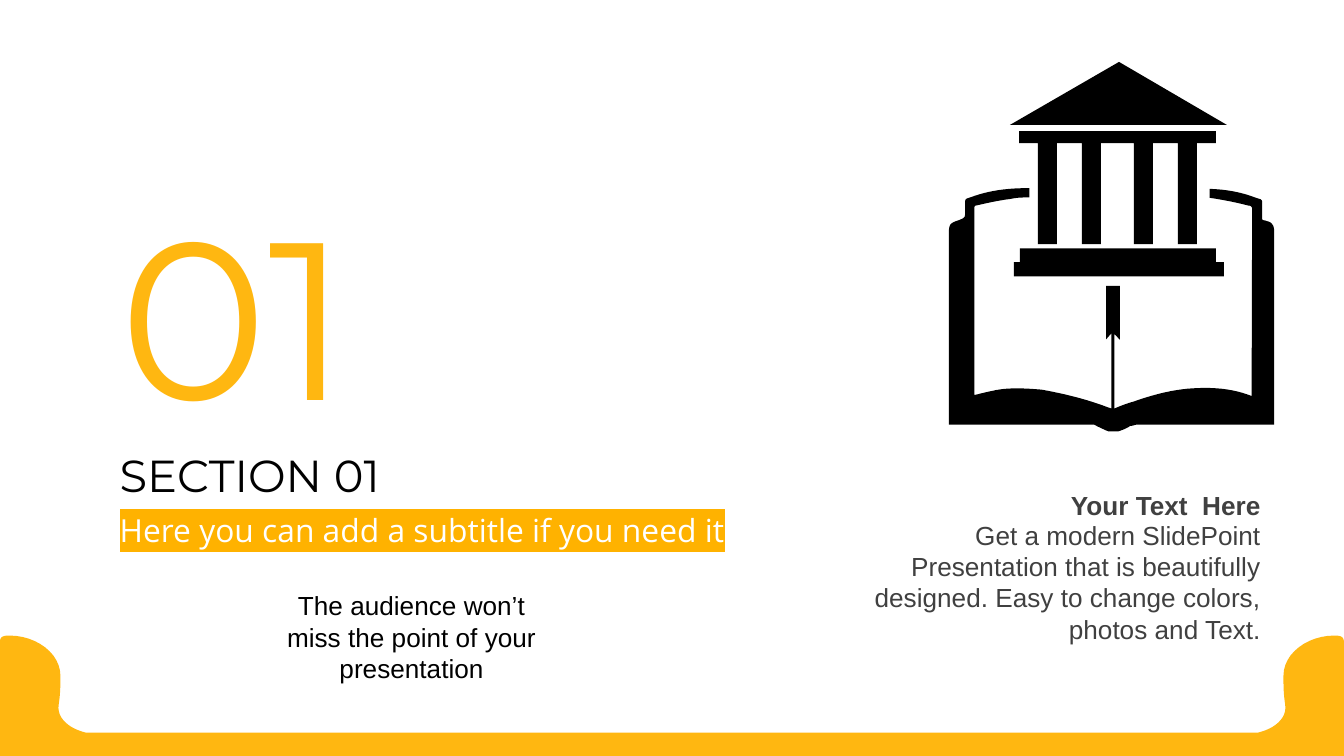
from lxml import etree
from pptx import Presentation
from pptx.dml.color import RGBColor
from pptx.enum import text
from pptx.oxml import ns
from pptx.util import Pt

AMBER = RGBColor(0xFF, 0xB7, 0x11)
HIGHLIGHT = RGBColor(0xFF, 0xB2, 0x00)
BLACK = RGBColor(0, 0, 0)
WHITE = RGBColor(0xFF, 0xFF, 0xFF)
GREY = RGBColor(0x40, 0x40, 0x40)
LEFT, CENTER, RIGHT = text.PP_ALIGN.LEFT, text.PP_ALIGN.CENTER, text.PP_ALIGN.RIGHT
TOP, BOTTOM = text.MSO_ANCHOR.TOP, text.MSO_ANCHOR.BOTTOM
WIDTH, HEIGHT = 720, 405

# Text boxes: wording, (left, top, width, height), format
TITLE = ("01", (57, 124, 264, 122),
         dict(size=120, font="Montserrat", color=AMBER, anchor=BOTTOM, inset=7.2))
TEXTS = [
    ("SECTION 01", (57, 231, 367, 45),
     dict(size=24, font="Montserrat", anchor=BOTTOM, inset=7.2)),
    ("Here you can add a subtitle if you need it", (57, 266.5, 367, 37),
     dict(size=17, font="Open Sans", color=WHITE, highlight=HIGHLIGHT, inset=7.2)),
    ("Your Text  Here", (438.5, 258.5, 244, 24),
     dict(color=GREY, bold=True, align=RIGHT)),
    ("Get a modern SlidePoint Presentation that is beautifully designed. "
     "Easy to change colors, photos and Text.", (438.5, 274.5, 244, 92),
     dict(color=GREY, align=RIGHT)),
    ("The audience won’t miss the point of your presentation", (142.5, 312.5, 156, 58),
     dict(align=CENTER)),
]

# Outlines: a pair of numbers is a corner, six numbers are a Bézier curve
FRAME_CORNER = [
    (0, 344), (0, 341.3, 1.5, 340.5, 5, 340.5), (19.5, 340.5, 32.4, 350, 32.4, 362),
    (32.4, 367, 32.4, 371.5, 31.5, 377.3), (30.2, 385, 37.5, 390.5, 46, 392.5),
]
BOOK = [
    (594, 231.2), (591.8, 230.4, 589, 229, 586, 227.5), (508.3, 227.5), (508.3, 125.3),
    (508.3, 120.2, 509, 119.5, 513.4, 118.1), (517, 116.6, 517, 116.6, 517, 113.8),
    (517, 110), (517, 106.6, 517, 106.6, 519.8, 105.8),
    (529.2, 102.2, 539.3, 100.8, 551.5, 100.8), (551.5, 105.8),
    (548.6, 105.8, 545, 105.8, 541.4, 106.6), (535.7, 107.3, 529.2, 108.7, 522.7, 110.2),
    (522, 110.2, 522, 110.9, 522, 112.3), (522, 211.7),
    (524.9, 211, 527.8, 210.2, 531.4, 209.5), (540, 207.4, 549.4, 208.1, 558, 208.8),
    (570.2, 211, 581.8, 213.8, 593.3, 218.2), (595.4, 218.9),
    (595.4, 178.6), (592.6, 181.8), (592.6, 153.2), (599.9, 153.2), (599.9, 182),
    (597, 179), (597, 218.9),
    (600.5, 217.4, 604.1, 216, 607, 215.3), (617, 211.7, 627.8, 208.8, 638.6, 208.1),
    (649.4, 207.4, 660.2, 208.1, 670.5, 212.2), (670.8, 112.3),
    (670.8, 110.9, 670.3, 110.2, 668.9, 110.2), (663.1, 108.7, 656.6, 107.3, 648, 106),
    (648, 101.2), (654.5, 101.5, 661, 102.2, 668.2, 104.4), (674.6, 106.6),
    (675.4, 106.6, 676.1, 107.3, 676.1, 108), (676.1, 116.6),
    (676.1, 117.4, 676.1, 118.1, 677.5, 118.1), (679.7, 118.8),
    (681.8, 119.5, 682.6, 121.7, 682.6, 123.8), (682.6, 227.5), (609.1, 227.5),
    (608.4, 227.5, 607, 228.2, 605.5, 228.2), (603.4, 229.7, 601.2, 230.4, 599, 231.2),
]
PEDIMENT = [(541, 67), (599.5, 33.2), (657.3, 67)]
TEMPLE_BASE = [(543.2, 148), (543.2, 140.4), (546.4, 140.4), (546.4, 133),
               (651.4, 133), (651.4, 140.4), (655.7, 140.4), (655.7, 148)]
BEAM = (546, 70.2, 651.4, 76.7)
COLUMN_LEFTS, COLUMN_WIDTH, COLUMN_FOOT = (556, 579.6, 607.5, 631), 10.2, 130.8


def flatten(outline, steps=12):
    """Turn corners and Bézier curves into a list of points."""
    points = []
    for part in outline:
        if len(part) == 2:
            points.append(part)
            continue
        controls = [points[-1], part[:2], part[2:4], part[4:]]
        for step in range(1, steps + 1):
            t = step / steps
            weights = ((1 - t) ** 3, 3 * t * (1 - t) ** 2, 3 * t * t * (1 - t), t ** 3)
            points.append(tuple(sum(w * c[axis] for w, c in zip(weights, controls))
                                for axis in (0, 1)))
    return points


def add_outline(slide, points, color):
    points = [(Pt(x), Pt(y)) for x, y in points]
    builder = slide.shapes.build_freeform(*points[0], scale=1.0)
    builder.add_line_segments(points[1:], close=True)
    shape = builder.convert_to_shape()
    shape.shadow.inherit = False
    shape.fill.solid()
    shape.fill.fore_color.rgb = color
    shape.line.fill.background()


def frame_points():
    corner = flatten(FRAME_CORNER)
    mirrored = [(WIDTH - x, y) for x, y in reversed(corner)]
    return corner + mirrored + [(WIDTH, HEIGHT), (0, HEIGHT)]


def colonnade_points():
    left, top, right, bottom = BEAM
    points = [(left, bottom), (left, top), (right, top), (right, bottom)]
    for column in reversed(COLUMN_LEFTS):
        edge = column + COLUMN_WIDTH
        points += [(edge, bottom), (edge, COLUMN_FOOT), (column, COLUMN_FOOT), (column, bottom)]
    return points


def write_text(shape, wording, box, size=14, font="Arial", color=BLACK, bold=False,
               align=LEFT, anchor=TOP, inset=None, highlight=None):
    shape.left, shape.top, shape.width, shape.height = map(Pt, box)
    frame = shape.text_frame
    frame.word_wrap = True
    frame.auto_size = text.MSO_AUTO_SIZE.NONE
    frame.vertical_anchor = anchor
    if inset is not None:
        frame.margin_left = frame.margin_right = Pt(inset)
        frame.margin_top = frame.margin_bottom = Pt(inset)
    paragraph = frame.paragraphs[0]
    paragraph.alignment = align
    run = paragraph.add_run()
    run.text = wording
    run.font.size, run.font.name, run.font.bold = Pt(size), font, bold
    run.font.color.rgb = color
    if highlight is not None:
        mark = etree.Element(ns.qn("a:highlight"))
        etree.SubElement(mark, ns.qn("a:srgbClr"), val=str(highlight))
        run.font._element.find(ns.qn("a:solidFill")).addnext(mark)


def main():
    presentation = Presentation()
    presentation.slide_width, presentation.slide_height = Pt(WIDTH), Pt(HEIGHT)
    slide = presentation.slides.add_slide(presentation.slide_layouts[5])
    add_outline(slide, frame_points(), AMBER)
    wording, box, style = TITLE
    write_text(slide.shapes.title, wording, box, **style)
    for wording, box, style in TEXTS:
        write_text(slide.shapes.add_textbox(0, 0, 0, 0), wording, box, **style)
    for points in (flatten(BOOK), PEDIMENT, colonnade_points(), TEMPLE_BASE):
        add_outline(slide, points, BLACK)
    presentation.save("out.pptx")


if __name__ == "__main__":
    main()
